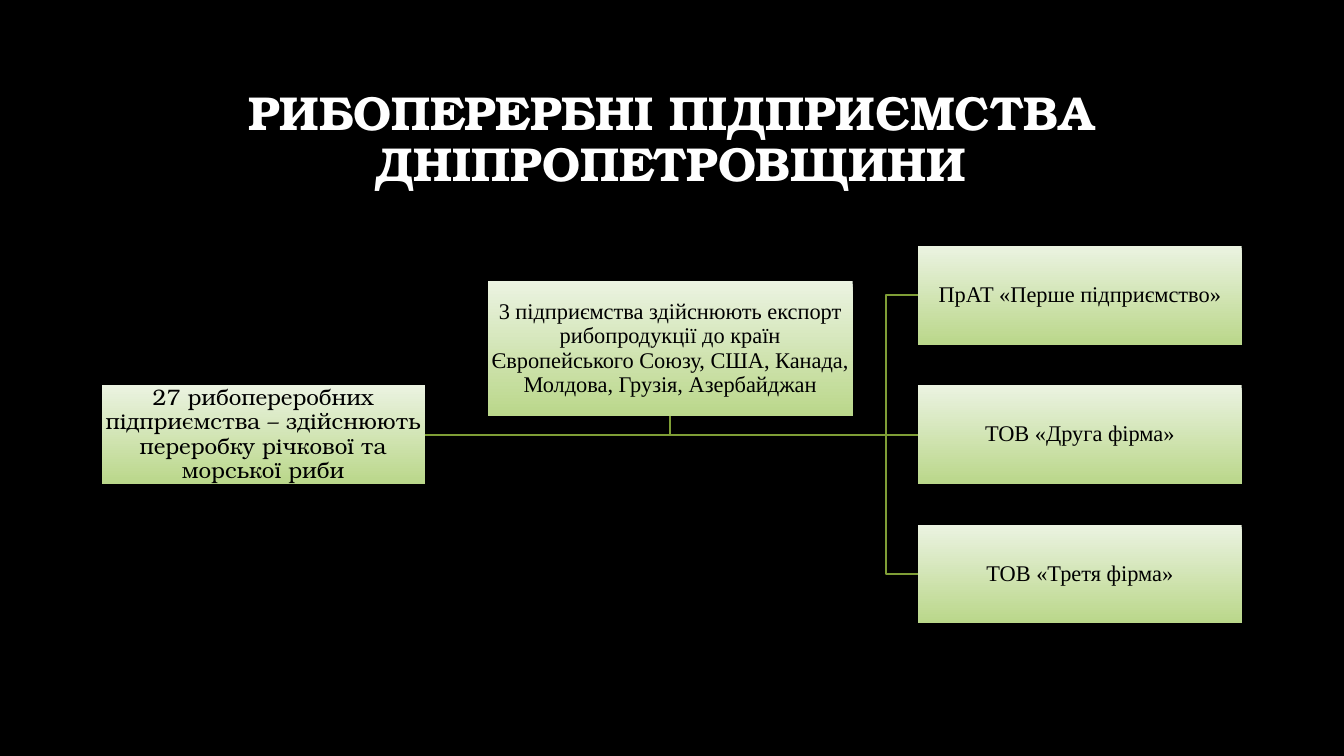
from dataclasses import dataclass

from lxml import etree
from pptx import Presentation
from pptx.dml.color import RGBColor
from pptx.enum.shapes import MSO_CONNECTOR, MSO_SHAPE
from pptx.enum.text import MSO_ANCHOR, MSO_AUTO_SIZE, PP_ALIGN
from pptx.oxml.ns import qn
from pptx.util import Cm, Pt

CENTER = PP_ALIGN.CENTER
MIDDLE = MSO_ANCHOR.MIDDLE
NO_FIT = MSO_AUTO_SIZE.NONE
RECTANGLE = MSO_SHAPE.RECTANGLE
STRAIGHT = MSO_CONNECTOR.STRAIGHT
LEFT_SIDE, RIGHT_SIDE = 1, 3
TITLE_ONLY = 5


@dataclass(frozen=True)
class Theme:
    """Colours, fonts and sizes of the slide."""
    background: RGBColor = RGBColor(0, 0, 0)
    title_color: RGBColor = RGBColor(255, 255, 255)
    box_color: RGBColor = RGBColor(0, 0, 0)
    box_top: RGBColor = RGBColor.from_string("EBF3E1")
    box_bottom: RGBColor = RGBColor.from_string("BAD78A")
    branch: RGBColor = RGBColor.from_string("7F9E36")
    branch_width: Pt = Pt(1.5)
    serif: str = "TeX Gyre Bonum"
    roman: str = "Times New Roman"
    title_size: Pt = Pt(34)
    box_size: Pt = Pt(16)


THEME = Theme()
ROOT_TEXT = "27 рибопереробних підприємства – здійснюють переробку річкової та морської риби"
EXPORT_TEXT = ("3 підприємства здійснюють експорт рибопродукції до країн "
               "Європейського Союзу, США, Канада, Молдова, Грузія, Азербайджан")
COMPANIES = ["ПрАТ «Перше підприємство»", "ТОВ «Друга фірма»", "ТОВ «Третя фірма»"]


def write(shape, text, *, font, size, color, bold=False, inset=None):
    """Put centred, formatted text into a shape."""
    frame = shape.text_frame
    frame.word_wrap = True
    frame.auto_size = NO_FIT
    frame.vertical_anchor = MIDDLE
    if inset is not None:
        frame.margin_left = frame.margin_right = inset
        frame.margin_top = frame.margin_bottom = inset
    paragraph = frame.paragraphs[0]
    paragraph.alignment = CENTER
    paragraph.line_spacing = 0.9
    run = paragraph.add_run()
    run.text = text
    run.font.name = font
    run.font.size = size
    run.font.bold = bold
    run.font.color.rgb = color


def add_title(slide, text, left, top, width, height):
    """Place the slide title in the given box."""
    title = slide.shapes.title
    title.left, title.top, title.width, title.height = left, top, width, height
    write(title, text, font=THEME.serif, size=THEME.title_size,
          color=THEME.title_color, bold=True)


def add_box(slide, text, left, top, width, height, font=THEME.roman):
    """Add one gradient box of the scheme and return it."""
    box = slide.shapes.add_shape(RECTANGLE, left, top, width, height)
    box.shadow.inherit = False
    box.line.fill.background()
    box.fill.gradient()
    box.fill.gradient_angle = 270
    for stop, color in zip(box.fill.gradient_stops, (THEME.box_top, THEME.box_bottom)):
        stop.color.rgb = color
    for stop, position in zip(box.fill.gradient_stops, (0, 1)):
        stop.position = position
    write(box, text, font=font, size=THEME.box_size, color=THEME.box_color, inset=Cm(0.03))
    return box


def style_branch(branch):
    """Give a branch line its colour and width."""
    branch.line.color.rgb = THEME.branch
    branch.line.width = THEME.branch_width


def add_bent_branch(slide, start, *corners):
    """Draw an open line through the given points."""
    builder = slide.shapes.build_freeform(*start)
    builder.add_line_segments(corners, close=False)
    branch = builder.convert_to_shape()
    branch.shadow.inherit = False
    branch.fill.background()
    style_branch(branch)


def add_straight_branch(slide, parent, child):
    """Join the right side of one box to the left side of another."""
    branch = slide.shapes.add_connector(STRAIGHT, 0, 0, 0, 0)
    branch.begin_connect(parent, RIGHT_SIDE)
    branch.end_connect(child, LEFT_SIDE)
    style_branch(branch)
    etree.SubElement(branch.element.spPr, qn("a:effectLst"))


def add_scheme(slide, left, top, width):
    """Lay out the root, the export note and the companies with their branches."""
    box_width, box_height, pitch = Cm(8.15), Cm(2.49), Cm(3.51)
    company_left = left + width - box_width
    companies = [add_box(slide, name, company_left, top + row * pitch, box_width, box_height)
                 for row, name in enumerate(COMPANIES)]
    root = add_box(slide, ROOT_TEXT, left, top + pitch, box_width, box_height, THEME.serif)
    export = add_box(slide, EXPORT_TEXT, left + Cm(9.73), top + Cm(0.89), Cm(9.2), Cm(3.4))

    start = root.left + root.width, root.top + root.height // 2
    trunk = company_left - Cm(0.81)
    for company in (companies[0], companies[2]):
        middle = company.top + company.height // 2
        add_bent_branch(slide, start, (trunk, start[1]), (trunk, middle), (company_left, middle))
    export_center = export.left + export.width // 2
    add_bent_branch(slide, start, (export_center, start[1]),
                    (export_center, export.top + export.height))
    add_straight_branch(slide, root, companies[1])


def main():
    """Build and save the slide."""
    deck = Presentation()
    deck.slide_width, deck.slide_height = Cm(33.87), Cm(19.05)
    slide = deck.slides.add_slide(deck.slide_layouts[TITLE_ONLY])
    slide.background.fill.solid()
    slide.background.fill.fore_color.rgb = THEME.background
    add_title(slide, "РИБОПЕРЕРБНІ ПІДПРИЄМСТВА ДНІПРОПЕТРОВЩИНИ",
              Cm(2.54), Cm(1.7), Cm(28.75), Cm(3.68))
    add_scheme(slide, Cm(2.56), Cm(6.2), Cm(28.73))
    deck.save("out.pptx")


if __name__ == "__main__":
    main()
